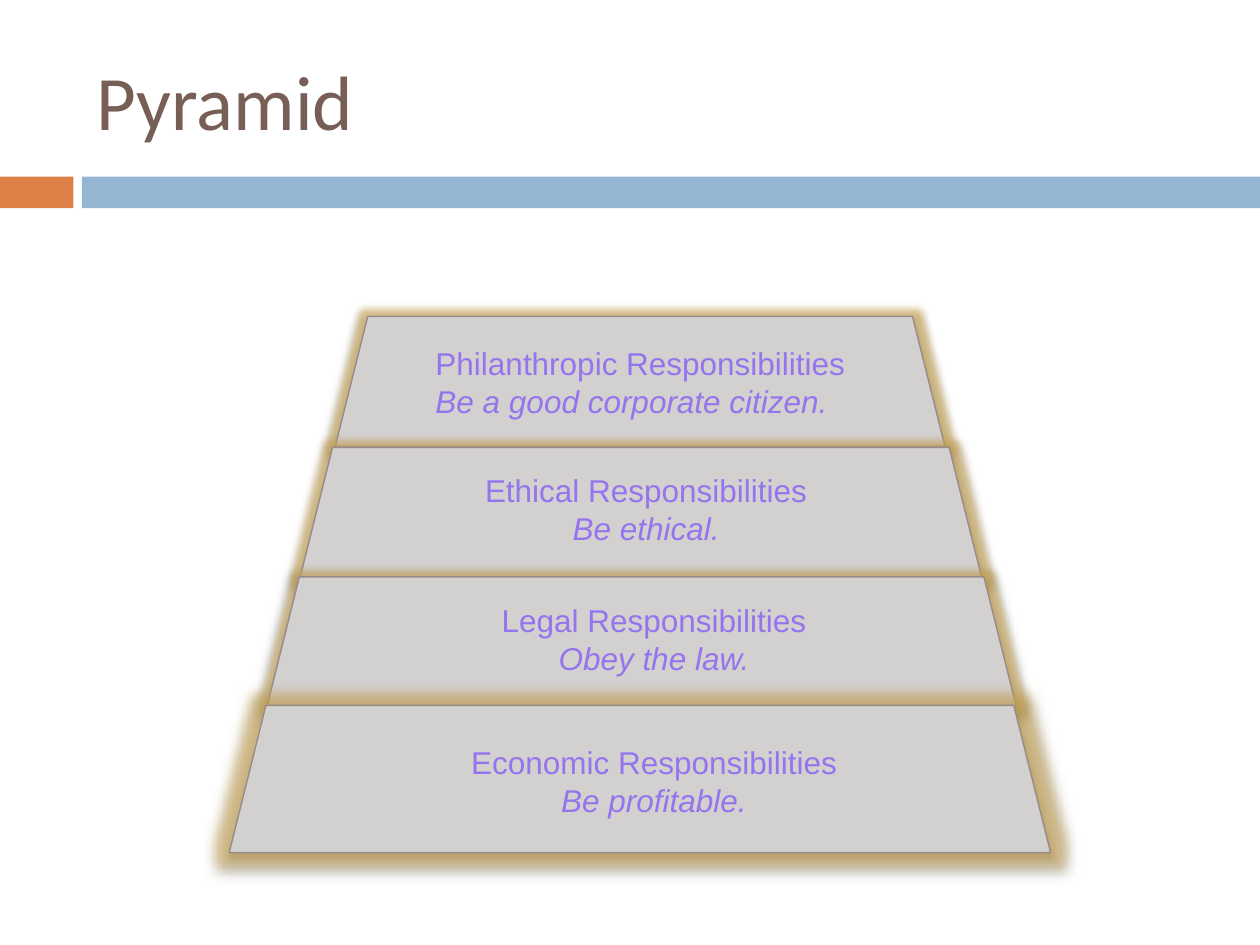
from lxml.etree import SubElement
from pptx import Presentation
from pptx.dml.color import RGBColor
from pptx.enum.shapes import MSO_SHAPE
from pptx.enum.text import MSO_ANCHOR, PP_ALIGN
from pptx.oxml.ns import qn
from pptx.util import Cm, Pt


def hue(code):
    return RGBColor.from_string(code)


def write(frame, text, size=18, font="Arial", color="9574ED", align=PP_ALIGN.CENTER,
          anchor=MSO_ANCHOR.TOP):
    frame.word_wrap = True
    frame.vertical_anchor = anchor
    para = frame.paragraphs[0]
    para.alignment = align
    for row, line in enumerate(text.split("\n")):
        if row:
            para.add_line_break()
        run = para.add_run()
        run.text = line
        run.font.size = Pt(size)
        run.font.name = font
        run.font.color.rgb = hue(color)
        run.font.italic = row > 0


class Deck:
    """Holds the style and the current slide, and draws each kind of element."""

    face, edge = "D3D0D0", "968C8C"
    halo, shade = "D8B25C", "000000"

    def __init__(self, slide):
        self.slide = slide

    def shape(self, kind, box, fill, home=None):
        form = (home or self.slide).shapes.add_shape(kind, *map(Cm, box))
        form.shadow.inherit = False
        form.fill.solid()
        form.fill.fore_color.rgb = hue(fill)
        form.line.fill.background()
        return form

    def bar(self, left, width, fill):
        self.shape(MSO_SHAPE.RECTANGLE, (left, 3.56, width, 0.64), fill)

    def text(self, box, text, home=None, **style):
        area = (home or self.slide).shapes.add_textbox(*map(Cm, box))
        write(area.text_frame, text, **style)

    def effect(self, form, tag, color, alpha, **sizes):
        root = form.element.spPr.find(qn("a:effectLst"))
        item = SubElement(root, qn(tag), {key: str(val) for key, val in sizes.items()})
        tint = SubElement(item, qn("a:srgbClr"), val=color)
        SubElement(tint, qn("a:alpha"), val=str(alpha * 1000))

    def tier(self, box, glow, spot, text, align=PP_ALIGN.CENTER):
        group = self.slide.shapes.add_group_shape()
        form = self.shape(MSO_SHAPE.TRAPEZOID, box, self.face, group)
        form.line.color.rgb = hue(self.edge)
        form.line.width = Pt(0.79)
        self.effect(form, "a:glow", self.halo, 60, rad=Pt(glow))
        self.effect(form, "a:outerShdw", self.shade, 45, blurRad=Pt(3),
                    dist=Pt(2.4), dir=90 * 60000, rotWithShape=0)
        self.text((*spot, 8.99, 1.8), text, group, align=align)


def main():
    show = Presentation()
    show.slide_width, show.slide_height = Cm(25.4), Cm(19.05)
    deck = Deck(show.slides.add_slide(show.slide_layouts[6]))
    deck.bar(0, 1.48, "DD8047")
    deck.bar(1.65, 23.75, "94B6D2")
    deck.text((1.7, 0.64, 22.66, 2.74), "Pyramid", size=44, font="Calibri",
              color="775F55", align=PP_ALIGN.LEFT, anchor=MSO_ANCHOR.MIDDLE)
    deck.tier((6.76, 6.38, 12.29, 2.62), 8, (8.53, 6.81),
              "Philanthropic Responsibilities\nBe a good corporate citizen.", PP_ALIGN.LEFT)
    deck.tier((6.05, 9.02, 13.74, 2.62), 8, (8.53, 9.37),
              "Ethical Responsibilities\nBe ethical.")
    deck.tier((5.38, 11.63, 15.11, 2.62), 8, (8.69, 11.99),
              "Legal Responsibilities\nObey the law.")
    deck.tier((4.62, 14.22, 16.56, 2.97), 14, (8.69, 14.86),
              "Economic Responsibilities\nBe profitable.")
    show.save("out.pptx")


if __name__ == "__main__":
    main()
